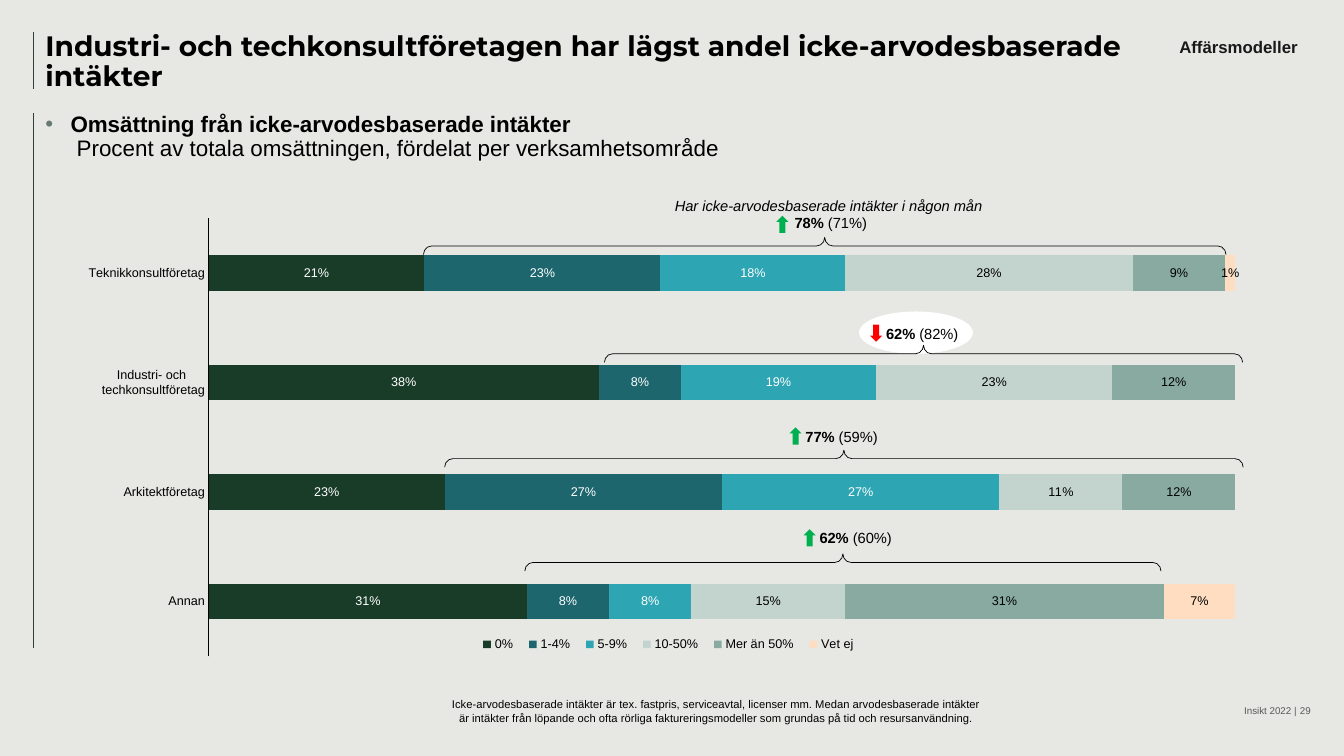
from lxml import etree
from pptx import Presentation
from pptx.chart import data
from pptx.dml import color
from pptx.enum import chart as ch, shapes, text
from pptx.oxml import ns
from pptx import util as u

HUES = {
    "back": "E7E8E4", "rule": "323E39", "black": "000000", "white": "FFFFFF",
    "tag": "191919", "foot": "595959", "dot": "657B71",
    "up": "00B050", "down": "FF0000",
}
LEFT, MID, RIGHT = text.PP_ALIGN.LEFT, text.PP_ALIGN.CENTER, text.PP_ALIGN.RIGHT
KIND = shapes.MSO_SHAPE


def rgb(hue):
    return color.RGBColor.from_string(HUES.get(hue, hue))


def box(*sides):
    return [u.Inches(side) for side in sides]


def sub(node, tag, **attrs):
    return etree.SubElement(node, ns.qn(tag), **attrs)


class Page:
    """Holds the slide and its style."""

    face = "Arial"

    def __init__(self, deck):
        self.slide = deck.slides.add_slide(deck.slide_layouts[5])
        self.items = self.slide.shapes
        fill = self.slide.background.fill
        fill.solid()
        fill.fore_color.rgb = rgb("back")

    def style(self, font, size, hue="black", bold=None, face=None):
        font.size, font.name = u.Pt(size), face or self.face
        font.color.rgb = rgb(hue)
        font.bold = bold

    def title(self, words, at):
        item = self.items.title
        item.left, item.top, item.width, item.height = box(*at)
        frame = item.text_frame
        self.inset(frame)
        frame.word_wrap = True
        frame.auto_size = text.MSO_AUTO_SIZE.NONE
        frame.vertical_anchor = text.MSO_ANCHOR.TOP
        para = frame.paragraphs[0]
        para.text, para.alignment, para.line_spacing = words, LEFT, 0.9
        self.style(para.font, 20, bold=True, face="Montserrat")

    def inset(self, frame):
        frame.margin_left = frame.margin_top = 0
        frame.margin_right = frame.margin_bottom = 0

    def note(self, runs, at, size, hue="black", align=LEFT, wrap=True,
             flush=False, low=False, dot=False):
        """Text box; runs are (words, marks), marks of b, i and n (new line)."""
        frame = self.items.add_textbox(*box(*at)).text_frame
        frame.word_wrap = wrap
        if flush:
            self.inset(frame)
        else:
            frame.auto_size = text.MSO_AUTO_SIZE.SHAPE_TO_FIT_TEXT
        if low:
            frame.vertical_anchor = text.MSO_ANCHOR.BOTTOM
        para = frame.paragraphs[0]
        para.alignment = align
        if dot:
            self.bullet(para)
        self.style(para.font, size, hue)
        for words, marks in runs:
            run = para.add_run()
            run.text = words
            run.font.bold, run.font.italic = "b" in marks, "i" in marks
            if "n" in marks:
                para.add_line_break()

    def bullet(self, para):
        props = para._p.get_or_add_pPr()
        props.set("marL", str(u.Inches(0.25)))
        props.set("indent", str(u.Inches(-0.25)))
        sub(sub(props, "a:buClr"), "a:srgbClr", val=HUES["dot"])
        sub(props, "a:buFont", typeface=self.face)
        sub(props, "a:buChar", char="•")
        para.line_spacing = 0.9

    def rule(self, x, top, end):
        line = self.items.add_connector(
            shapes.MSO_CONNECTOR.STRAIGHT, *box(x, top, x, end))
        line.line.color.rgb, line.line.width = rgb("rule"), u.Pt(0.5)
        sub(line._element.spPr, "a:effectLst")

    def shape(self, kind, at, fill=None, turn=0):
        item = self.items.add_shape(kind, *box(*at))
        item.shadow.inherit = False
        item.rotation = turn
        if fill:
            item.fill.solid()
            item.fill.fore_color.rgb = rgb(fill)
            item.line.fill.background()
        else:
            item.fill.background()
            item.line.color.rgb, item.line.width = rgb("black"), u.Pt(0.5)
        return item

    def brace(self, x, y, span, thick=0.17):
        """Brace pointing up, centred on x, y."""
        at = (x - thick / 2, y - span / 2, thick, span)
        item = self.shape(KIND.RIGHT_BRACE, at, turn=270)
        item.adjustments[0], item.adjustments[1] = 0.476, 0.5

    def bars(self, cats, rows, at):
        """Stacked bars; rows are (name, values, hue, label hue, own labels)."""
        feed = data.CategoryChartData(number_format="0%")
        feed.categories = cats
        for name, vals, *_ in rows:
            feed.add_series(name, vals)
        plan = self.items.add_chart(
            ch.XL_CHART_TYPE.BAR_STACKED, *box(*at), feed).chart
        self.style(plan.font, 10)
        plan.has_title = False
        # Axes
        axis = plan.category_axis
        axis.reverse_order = True
        axis.major_tick_mark = ch.XL_TICK_MARK.NONE
        axis.format.line.color.rgb = rgb("black")
        axis.format.line.width = u.Pt(0.75)
        self.style(axis.tick_labels.font, 9)
        scale = plan.value_axis
        scale.minimum_scale, scale.maximum_scale = 0, 1
        scale.has_major_gridlines = scale.visible = False
        # Legend
        plan.has_legend = True
        plan.legend.position = ch.XL_LEGEND_POSITION.BOTTOM
        plan.legend.include_in_layout = False
        self.style(plan.legend.font, 9)
        # Bars and labels
        plot = plan.plots[0]
        plot.gap_width, plot.overlap = 207, 100
        plot.vary_by_categories = False
        for row, (_, _, hue, ink, own) in zip(plot.series, rows):
            row.format.fill.solid()
            row.format.fill.fore_color.rgb = rgb(hue)
            tags = row.data_labels
            tags.show_value = True
            tags.number_format, tags.number_format_is_linked = "0%;;", False
            self.style(tags.font, 9, ink)
            for spot, words in own.items():
                run = row.points[spot].data_label.text_frame.paragraphs[0].add_run()
                run.text = words
                self.style(run.font, 9, ink)
        # Fixed places for plot and legend
        area = plan._chartSpace.chart.plotArea
        for old in area.findall(ns.qn("c:layout")):
            area.remove(old)
        area.insert(0, self.place(0.12, 0.02, 0.86, 0.9, inner=True))
        key = plan.legend._element
        for old in key.findall(ns.qn("c:layout")):
            key.remove(old)
        key.find(ns.qn("c:legendPos")).addnext(self.place(0.34, 0.87, 0.33, 0.05))

    def place(self, x, y, w, h, inner=False):
        node = etree.Element(ns.qn("c:layout"))
        man = sub(node, "c:manualLayout")
        if inner:
            sub(man, "c:layoutTarget", val="inner")
        for mode in ("xMode", "yMode"):
            sub(man, "c:" + mode, val="edge")
        for name, val in zip("xywh", (x, y, w, h)):
            sub(man, "c:" + name, val=str(val))
        return node


deck = Presentation()
deck.slide_width, deck.slide_height = box(13.33, 7.5)
page = Page(deck)

# Margin rules, title and heading
page.rule(0.33, 0.32, 0.88)
page.rule(0.33, 1.12, 6.43)
page.title("Industri- och techkonsultföretagen har lägst andel "
           "icke-arvodesbaserade intäkter", (0.45, 0.32, 10.92, 0.56))
page.note([("Omsättning från icke-arvodesbaserade intäkter", "bn"),
           (" Procent av totala omsättningen, fördelat per verksamhetsområde", "")],
          (0.45, 1.12, 7.9, 0.61), 16, flush=True, dot=True)
page.note([("Affärsmodeller", "b")], (11.57, 0.32, 1.43, 0.3), 12, "tag", MID)

# Footer
for words, x, wide in (("Insikt 2022 |", 8.36, 4.5), ("29", 10, 3)):
    page.note([(words, "")], (x, 6.93, wide, 0.18), 7, "foot", RIGHT,
              flush=True, low=True)

# Chart
page.shape(KIND.OVAL, (8.52, 3.09, 1.13, 0.42), "white")
page.bars(
    ["Teknikkonsultföretag", "Industri- och \ntechkonsultföretag",
     "Arkitektföretag", "Annan"],
    [("0%", (0.21, 0.38, 0.23, 0.31), "193C29", "white", {}),
     ("1-4%", (0.23, 0.08, 0.27, 0.08), "1D666E", "white", {}),
     ("5-9%", (0.18, 0.19, 0.27, 0.08), "2EA5B3", "white", {}),
     ("10-50%", (0.28, 0.23, 0.12, 0.15), "C3D4CF", "black", {2: "11%"}),
     ("Mer än 50%", (0.09, 0.12, 0.12, 0.31), "88AAA0", "black", {}),
     ("Vet ej", (0.02, 0, 0, 0.08), "FEDDC1", "black", {0: "1%", 3: "7%"})],
    (0.65, 2.07, 11.84, 4.83))
page.note([("Icke-arvodesbaserade intäkter är tex. fastpris, serviceavtal, "
            "licenser mm. Medan arvodesbaserade intäkter är intäkter från "
            "löpande och ofta rörliga faktureringsmodeller som grundas på tid "
            "och resursanvändning.", "")], (4.34, 6.87, 5.53, 0.37), 8, align=MID)

# Braces, shares and trend arrows
page.note([("Har icke-arvodesbaserade intäkter i någon mån", "in"),
           (" 78% ", "b"), ("(71%)", "")],
          (6.57, 1.9, 3.3, 0.45), 10.5, align=MID, wrap=False)
for brace, (x, y), trend, now, past in (
        ((8.18, 2.44, 7.96), (7.7, 2.14), "up", None, None),
        ((9.16, 3.51, 6.33), (8.63, 3.22), "down", "62% ", "(82%)"),
        ((8.37, 4.55, 7.92), (7.83, 4.24), "up", "77% ", "(59%)"),
        ((8.36, 5.58, 6.31), (7.97, 5.25), "up", "62% ", "(60%)")):
    page.brace(*brace)
    if now:
        page.note([(now, "b"), (past, "")], (x + 0.06, y - 0.05, 0.93, 0.28),
                  10.5, wrap=False)
    page.shape(KIND.DOWN_ARROW, (x, y, 0.12, 0.17), trend,
               180 if trend == "up" else 0)

deck.save("out.pptx")
